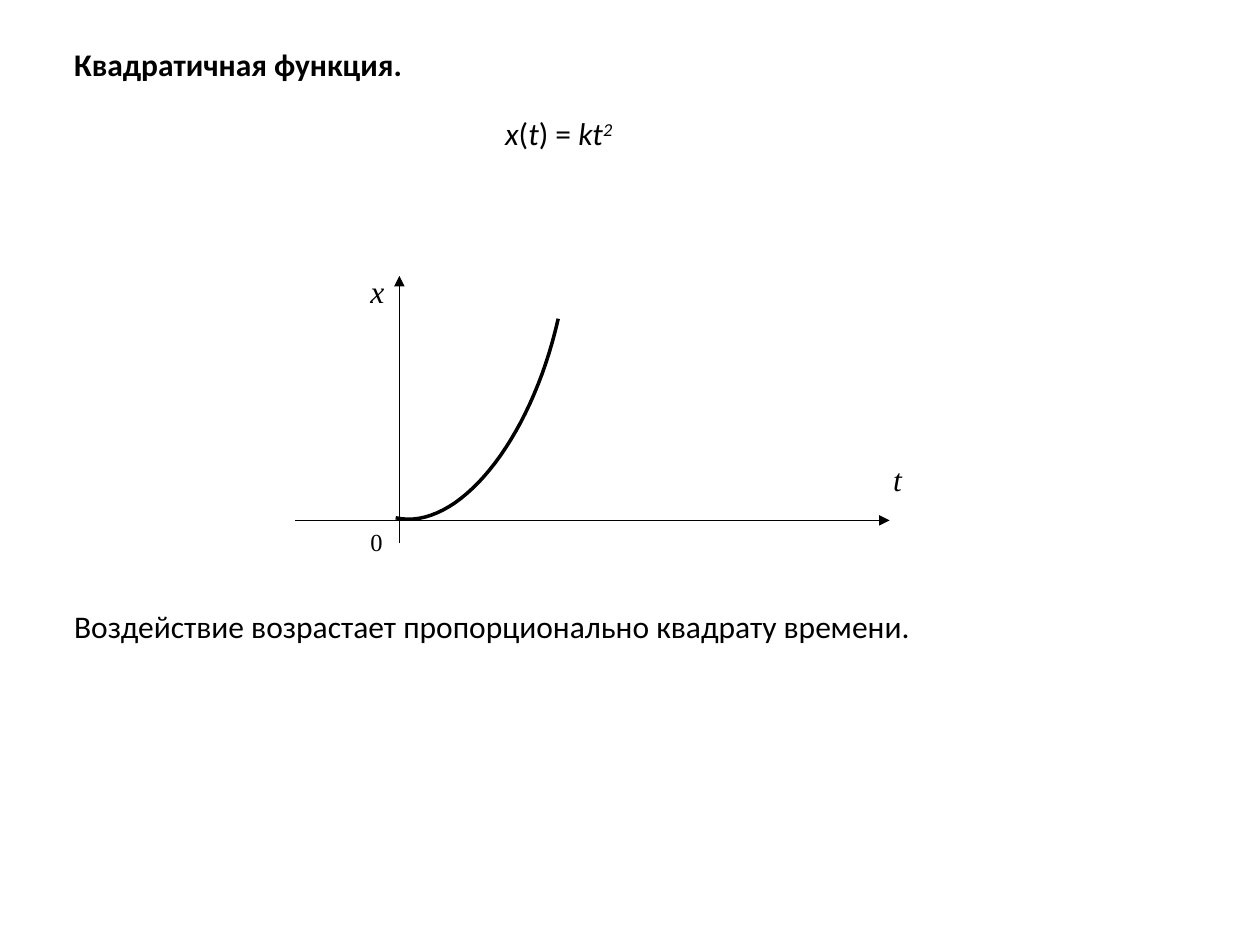
import dataclasses

import pptx
import pptx.dml.color
import pptx.enum.shapes
import pptx.enum.text
import pptx.oxml
import pptx.oxml.ns
import pptx.util
from pptx.util import Inches, Pt

BLACK = pptx.dml.color.RGBColor(0, 0, 0)
BODY_FONT = "Calibri"
AXIS_FONT = "Times New Roman"
TEXT_HEIGHT = 0.4
LABEL_WIDTH = 0.51
CURVE_STEPS = 32

Point = tuple[float, float]


@dataclasses.dataclass
class Caption:
    text: str
    left: float
    top: float
    width: float
    font: str = BODY_FONT
    size: int = 18
    bold: bool = False
    italic: bool = False
    indent: float = 0
    space_after: int = 0


@dataclasses.dataclass
class Axis:
    start: Point
    tip: Point


CAPTIONS = [
    Caption("Квадратичная функция.", 0, 0.31, 10, bold=True, indent=0.49),
    Caption("Воздействие возрастает пропорционально квадрату времени.",
            0, 4.77, 10, indent=0.49),
    Caption("x", 2.84, 2.11, LABEL_WIDTH, AXIS_FONT, italic=True, space_after=10),
    Caption("t", 6.99, 3.6, LABEL_WIDTH, AXIS_FONT, italic=True, space_after=10),
    Caption("0", 2.84, 4.13, LABEL_WIDTH, AXIS_FONT, size=14, space_after=10),
]
FORMULA = Caption("", 3.91, 0.86, 1.31)
FORMULA_PARTS = [("x", True), ("(", False), ("t", True), (") = ", False), ("kt", True)]
AXES = [Axis((3.17, 4.31), (3.17, 2.19)), Axis((2.34, 4.13), (7.06, 4.13))]
PARABOLA = [(3.14, 4.11), (3.63, 4.22), (4.21, 3.51), (4.43, 2.53)]


def add_caption(slide, caption: Caption):
    """Add a one-paragraph text box and return its paragraph."""
    box = slide.shapes.add_textbox(Inches(caption.left), Inches(caption.top),
                                   Inches(caption.width), Inches(TEXT_HEIGHT))
    frame = box.text_frame
    frame.word_wrap = True
    frame.auto_size = pptx.enum.text.MSO_AUTO_SIZE.SHAPE_TO_FIT_TEXT
    paragraph = frame.paragraphs[0]
    paragraph.text = caption.text
    paragraph.space_after = Pt(caption.space_after)
    font = paragraph.font
    font.name, font.size = caption.font, Pt(caption.size)
    font.bold, font.italic = caption.bold, caption.italic
    font.color.rgb = BLACK
    if caption.indent:
        paragraph._p.get_or_add_pPr().set("indent", str(Inches(caption.indent)))
    return paragraph


def add_formula(slide) -> None:
    paragraph = add_caption(slide, FORMULA)
    for text, italic in FORMULA_PARTS:
        run = paragraph.add_run()
        run.text = text
        run.font.italic = italic
    exponent = paragraph.add_run()
    exponent.text = "2"
    exponent.font.italic = True
    exponent.font._element.set("baseline", "30000")


def add_axis(slide, axis: Axis) -> None:
    arrow = slide.shapes.add_connector(
        pptx.enum.shapes.MSO_CONNECTOR.STRAIGHT,
        *map(Inches, axis.start), *map(Inches, axis.tip))
    arrow.line.color.rgb = BLACK
    arrow.line.width = Pt(0.75)
    tail = pptx.oxml.ns.qn("a:tailEnd")
    arrow.line._get_or_add_ln().makeelement(tail)
    line = arrow.line._get_or_add_ln()
    line.append(line.makeelement(tail, {"type": "triangle"}))
    properties = arrow._element.spPr
    properties.append(properties.makeelement(pptx.oxml.ns.qn("a:effectLst")))


def bezier_point(controls: list[Point], t: float) -> Point:
    weights = ((1 - t) ** 3, 3 * t * (1 - t) ** 2, 3 * t ** 2 * (1 - t), t ** 3)
    x, y = (sum(w * value for w, value in zip(weights, values))
            for values in zip(*controls))
    return Inches(x), Inches(y)


def add_curve(slide, controls: list[Point]) -> None:
    start, *rest = [bezier_point(controls, step / CURVE_STEPS)
                    for step in range(CURVE_STEPS + 1)]
    builder = slide.shapes.build_freeform(*start)
    builder.add_line_segments(rest, close=False)
    curve = builder.convert_to_shape()
    curve.shadow.inherit = False
    curve.fill.background()
    curve.line.color.rgb = BLACK
    curve.line.width = Pt(2)


def main() -> None:
    presentation = pptx.Presentation()
    presentation.slide_width = Inches(10)
    presentation.slide_height = Inches(7.5)
    slide = presentation.slides.add_slide(presentation.slide_layouts[6])
    for caption in CAPTIONS:
        add_caption(slide, caption)
    add_formula(slide)
    for axis in AXES:
        add_axis(slide, axis)
    add_curve(slide, PARABOLA)
    presentation.save("out.pptx")


if __name__ == "__main__":
    main()
